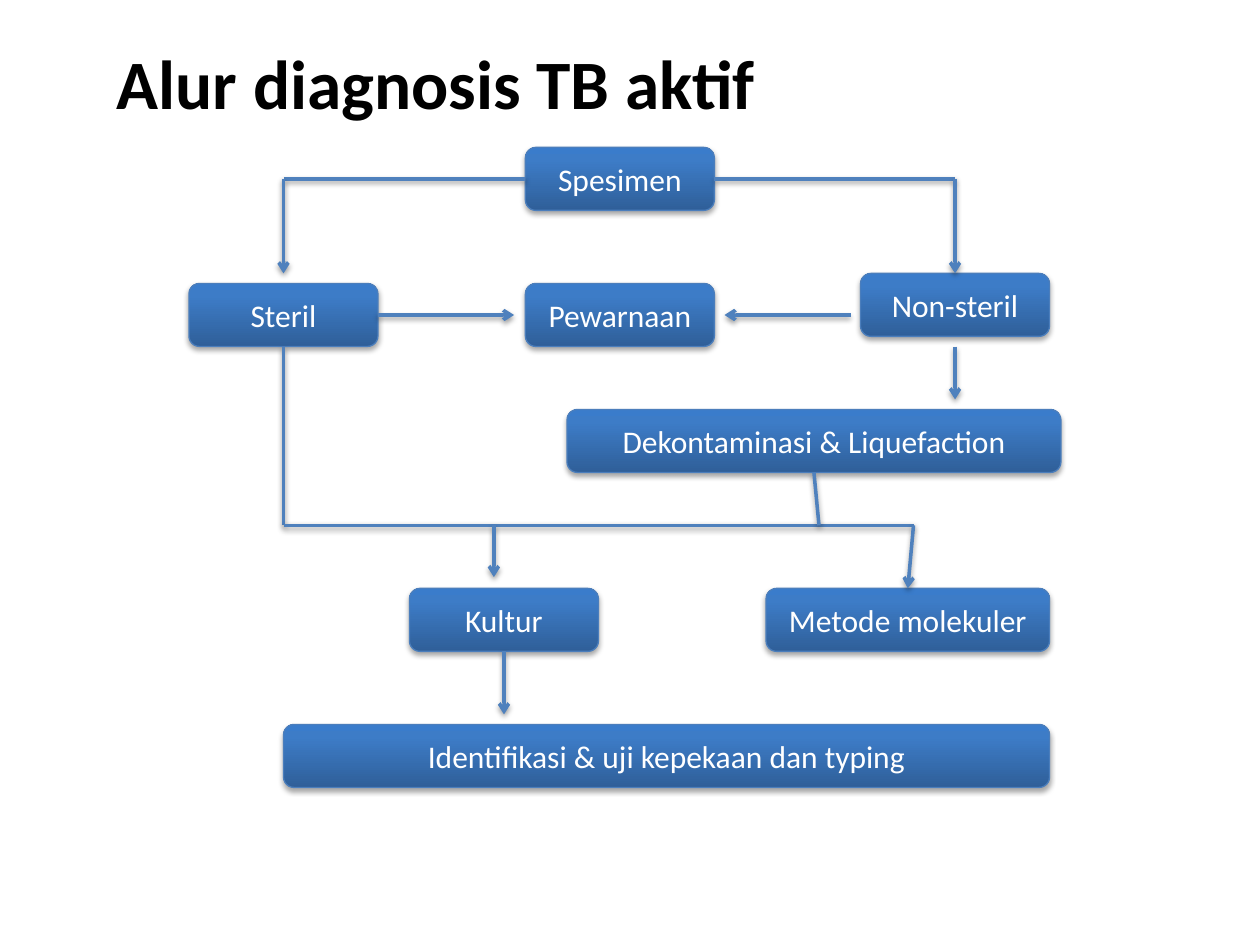
from dataclasses import dataclass
from typing import Optional

from lxml import etree
from pptx import Presentation
from pptx.dml.color import RGBColor
from pptx.enum.shapes import MSO_CONNECTOR, MSO_SHAPE
from pptx.enum.text import MSO_ANCHOR, PP_ALIGN
from pptx.oxml.ns import qn
from pptx.util import Inches, Pt

STRAIGHT = MSO_CONNECTOR.STRAIGHT
ROUNDED = MSO_SHAPE.ROUNDED_RECTANGLE
MIDDLE = MSO_ANCHOR.MIDDLE
CENTER = PP_ALIGN.CENTER

FONT = "Calibri"
COLORS = {
    "title": "000000",
    "label": "FFFFFF",
    "border": "4B7EBC",
    "arrow": "4F81BD",
    "shadow": "000000",
}
STEP_GRADIENT = [(0, "2F5F99"), (80, "3D7CC7"), (100, "3A7CCB")]

STEP_HEIGHT = 0.5
TOP, LEFT, BOTTOM, RIGHT = range(4)


@dataclass
class Step:
    label: str
    left: float
    top: float
    width: float = 1.5


@dataclass
class Joint:
    step: str
    side: int


@dataclass
class Flow:
    start: tuple[float, float]
    end: tuple[float, float]
    arrow: bool = True
    begin_joint: Optional[Joint] = None
    end_joint: Optional[Joint] = None


STEPS = [
    Step("Spesimen", 4.17, 1.17),
    Step("Steril", 1.5, 2.25),
    Step("Pewarnaan", 4.17, 2.25),
    Step("Non-steril", 6.83, 2.17),
    Step("Dekontaminasi & Liquefaction", 4.5, 3.25, 3.92),
    Step("Kultur", 3.25, 4.67),
    Step("Metode molekuler", 6.08, 4.67, 2.25),
    Step("Identifikasi & uji kepekaan dan typing", 2.25, 5.75, 6.08),
]

STERILE_X, NON_STERILE_X = 2.25, 7.58
SPLIT_Y, STAIN_Y, MERGE_Y = 1.42, 2.5, 4.17

FLOWS = [
    # Specimen splits into sterile and non-sterile
    Flow((4.17, SPLIT_Y), (STERILE_X, SPLIT_Y), False, Joint("Spesimen", LEFT)),
    Flow((NON_STERILE_X, SPLIT_Y), (5.67, SPLIT_Y), False,
         end_joint=Joint("Spesimen", RIGHT)),
    Flow((STERILE_X, SPLIT_Y), (STERILE_X, 2.17)),
    Flow((NON_STERILE_X, SPLIT_Y), (NON_STERILE_X, 2.17),
         end_joint=Joint("Non-steril", TOP)),
    # Both go to staining
    Flow((3, STAIN_Y), (4.08, STAIN_Y), begin_joint=Joint("Steril", RIGHT)),
    Flow((6.75, STAIN_Y), (5.75, STAIN_Y)),
    # Both merge, then branch to culture and molecular methods
    Flow((STERILE_X, 2.75), (STERILE_X, MERGE_Y), False, Joint("Steril", BOTTOM)),
    Flow((NON_STERILE_X, 2.75), (NON_STERILE_X, 3.17)),
    Flow((STERILE_X, MERGE_Y), (7.25, MERGE_Y), False),
    Flow((6.46, 3.75), (6.5, MERGE_Y), False,
         Joint("Dekontaminasi & Liquefaction", BOTTOM)),
    Flow((7.25, MERGE_Y), (7.21, 4.67), end_joint=Joint("Metode molekuler", TOP)),
    Flow((3.92, MERGE_Y), (3.92, 4.58)),
    Flow((4, 5.17), (4, 5.67), begin_joint=Joint("Kultur", BOTTOM)),
]


def rgb(name: str) -> RGBColor:
    return RGBColor.from_string(COLORS[name])


def add_color(parent, hex_color: str):
    return etree.SubElement(parent, qn("a:srgbClr"), val=hex_color)


def add_shadow(effects, distance: float, opacity: int) -> None:
    shadow = etree.SubElement(
        effects, qn("a:outerShdw"), blurRad=str(Pt(3.1)), dist=str(Pt(distance)),
        dir="5400000", rotWithShape="0")
    color = add_color(shadow, COLORS["shadow"])
    etree.SubElement(color, qn("a:alpha"), val=str(opacity * 1000))


def format_text(frame, size: float, color: str, bold: bool = False) -> None:
    frame.word_wrap = True
    frame.vertical_anchor = MIDDLE
    font = frame.paragraphs[0].runs[0].font
    font.name, font.size, font.bold = FONT, Pt(size), bold
    font.color.rgb = rgb(color)


def draw_title(slide, title: str) -> None:
    box = slide.shapes.add_textbox(Inches(0.83), Inches(0.25), Inches(8.83), Inches(0.79))
    box.text_frame.text = title
    format_text(box.text_frame, 39.6, "title", bold=True)


def draw_step(slide, step: Step):
    box = slide.shapes.add_shape(ROUNDED, Inches(step.left), Inches(step.top),
                                 Inches(step.width), Inches(STEP_HEIGHT))
    # Gradient from the bottom up
    box.fill.gradient()
    box.fill.gradient_angle = 90
    properties = box._element.spPr
    stops = properties.find(f".//{qn('a:gsLst')}")
    stops.clear()
    for position, color in STEP_GRADIENT:
        add_color(etree.SubElement(stops, qn("a:gs"), pos=str(position * 1000)), color)
    box.line.color.rgb = rgb("border")
    box.line.width = Pt(0.75)
    box.shadow.inherit = False
    add_shadow(properties.find(qn("a:effectLst")), 1.8, 35)
    box.text_frame.text = step.label
    box.text_frame.paragraphs[0].alignment = CENTER
    format_text(box.text_frame, 18, "label")
    return box


def draw_flow(slide, flow: Flow, boxes: dict) -> None:
    line = slide.shapes.add_connector(
        STRAIGHT, *(Inches(value) for value in flow.start + flow.end))
    if flow.begin_joint:
        line.begin_connect(boxes[flow.begin_joint.step], flow.begin_joint.side)
    if flow.end_joint:
        line.end_connect(boxes[flow.end_joint.step], flow.end_joint.side)
    line.line.color.rgb = rgb("arrow")
    line.line.width = Pt(2)
    properties = line._element.spPr
    if flow.arrow:
        etree.SubElement(properties.find(qn("a:ln")), qn("a:tailEnd"), type="arrow")
    add_shadow(etree.SubElement(properties, qn("a:effectLst")), 1.6, 38)


def main() -> None:
    presentation = Presentation()
    presentation.slide_width = Inches(10)
    presentation.slide_height = Inches(7.5)
    slide = presentation.slides.add_slide(presentation.slide_layouts[6])

    draw_title(slide, "Alur diagnosis TB aktif")
    boxes = {step.label: draw_step(slide, step) for step in STEPS}
    for flow in FLOWS:
        draw_flow(slide, flow, boxes)

    presentation.save("out.pptx")


if __name__ == "__main__":
    main()
